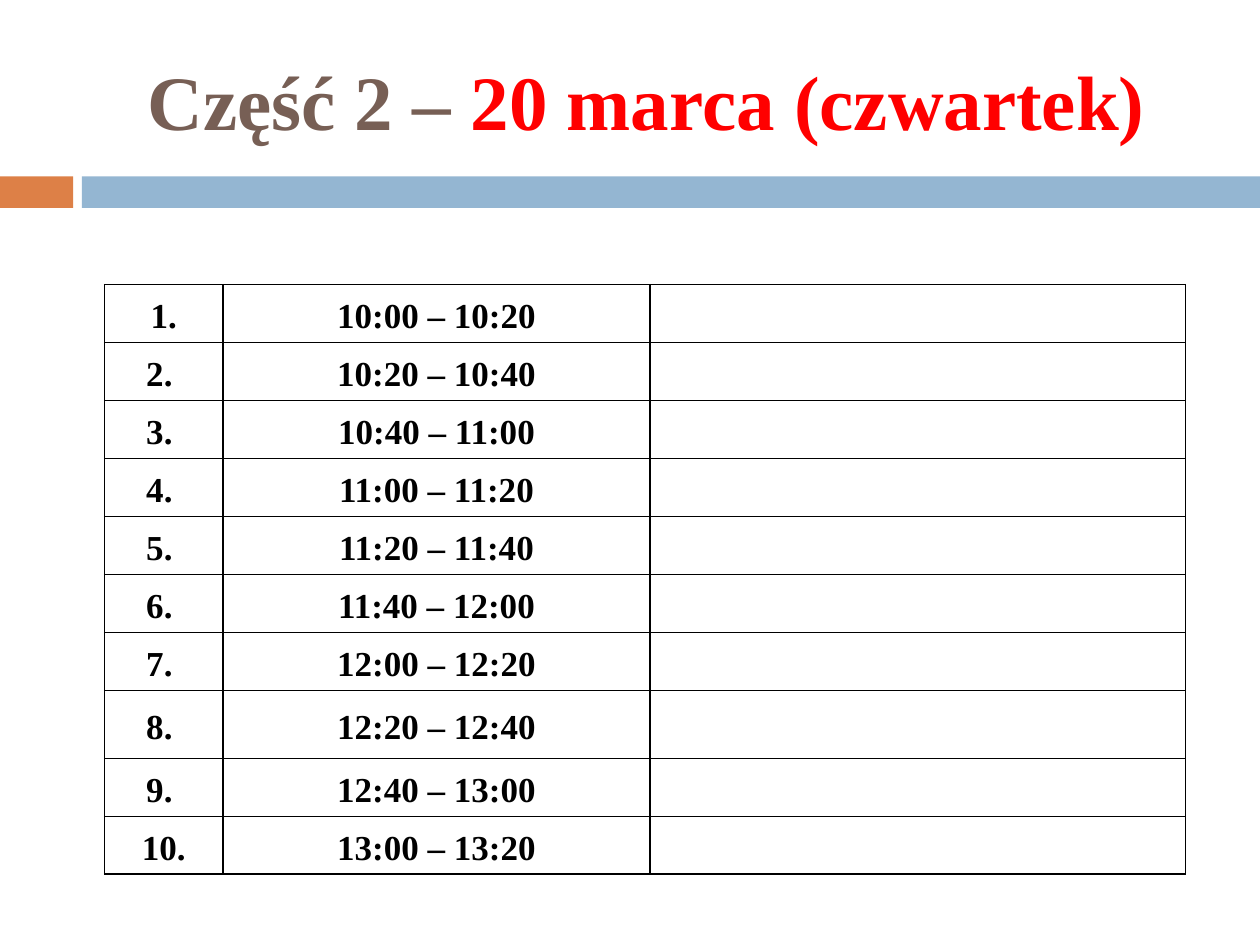
from lxml.etree import SubElement
from pptx import Presentation
from pptx.dml.color import RGBColor
from pptx.enum.shapes import MSO_SHAPE as Shape
from pptx.enum.text import MSO_ANCHOR as Anchor, PP_ALIGN as Align
from pptx.oxml.ns import qn
from pptx.util import Inches, Pt

COLORS = {"orange": "DD8047", "blue": "94B6D2", "brown": "775F55",
          "red": "FF0000", "black": "000000"}
FONT = "Times New Roman"
COLUMNS = [0.94, 3.39, 4.25]
ROWS = [0.46] * 7 + [0.54] + [0.46] * 2
FIRST_START, SLOT = 10 * 60, 20  # minutes


def add_span(para, text, size, color):
    span = para.add_run()
    span.text = text
    span.font.name, span.font.size, span.font.bold = FONT, Pt(size), True
    span.font.color.rgb = RGBColor.from_string(COLORS[color])


def add_title(page, box):
    title = page.shapes.title
    title.left, title.top, title.width, title.height = map(Inches, box)
    frame = title.text_frame
    frame.vertical_anchor = Anchor.MIDDLE
    para = frame.paragraphs[0]
    para.alignment = Align.CENTER
    add_span(para, "Część 2 – ", 44, "brown")
    add_span(para, "20 marca (czwartek)", 44, "red")


def add_band(page, box):
    """Short orange bar and long blue bar, split by a narrow gap."""
    left, top, width, height = box
    short, gap = 0.058 * width, 0.007 * width
    long_start = short + gap
    for start, length, color in ((0, short, "orange"),
                                 (long_start, width - long_start, "blue")):
        bar = page.shapes.add_shape(Shape.RECTANGLE, Inches(left + start), Inches(top),
                                    Inches(length), Inches(height))
        bar.shadow.inherit = False
        bar.fill.solid()
        bar.fill.fore_color.rgb = RGBColor.from_string(COLORS[color])
        bar.line.fill.background()


def add_borders(cell):
    cell.fill.background()
    properties = cell._tc.get_or_add_tcPr()
    for position, side in enumerate(("lnL", "lnR", "lnT", "lnB")):
        line = SubElement(properties, qn(f"a:{side}"), w=str(Pt(1)))
        fill = SubElement(line, qn("a:solidFill"))
        SubElement(fill, qn("a:srgbClr"), val=COLORS["black"])
        properties.insert(position, line)


def fill_cell(cell, text):
    cell.vertical_anchor = Anchor.MIDDLE
    cell.margin_left = cell.margin_right = Inches(0.07)
    cell.margin_top = cell.margin_bottom = 0
    para = cell.text_frame.paragraphs[0]
    para.alignment = Align.CENTER
    para.line_spacing = 1.15
    add_span(para, text, 20, "black")


def clock(minutes):
    return f"{minutes // 60}:{minutes % 60:02d}"


def add_schedule(page, box):
    frame = page.shapes.add_table(len(ROWS), len(COLUMNS), *map(Inches, box))
    table = frame.table
    table.first_row = table.horz_banding = False
    for column, width in zip(table.columns, COLUMNS):
        column.width = Inches(width)
    for index, (row, height) in enumerate(zip(table.rows, ROWS)):
        row.height = Inches(height)
        for cell in row.cells:
            add_borders(cell)
        # The middle numbers carry a trailing no-break space
        tail = " " if 0 < index < len(ROWS) - 1 else ""
        start = FIRST_START + index * SLOT
        fill_cell(row.cells[0], f"{index + 1}.{tail}")
        fill_cell(row.cells[1], f"{clock(start)} – {clock(start + SLOT)}")


def main():
    deck = Presentation()
    deck.slide_width, deck.slide_height = Inches(10), Inches(7.5)
    page = deck.slides.add_slide(deck.slide_layouts[5])
    add_band(page, (0, 1.4, 10, 0.25))
    add_title(page, (0.67, 0.25, 8.92, 1.08))
    add_schedule(page, (0.83, 2.26, sum(COLUMNS), sum(ROWS)))
    deck.save("out.pptx")


if __name__ == "__main__":
    main()
